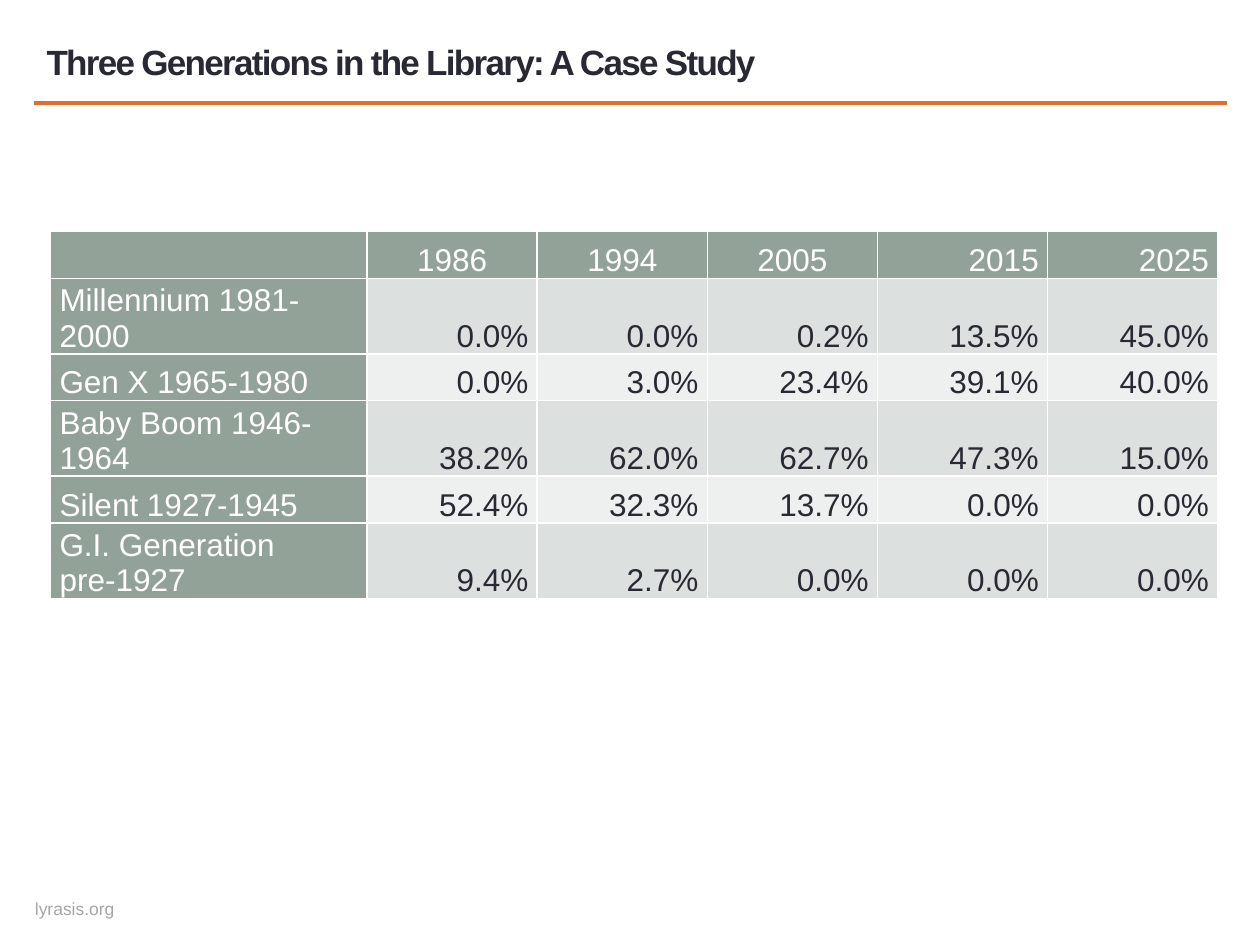
from dataclasses import dataclass

from lxml.etree import SubElement
from pptx import Presentation
from pptx.dml.color import RGBColor as Color
from pptx.enum.shapes import MSO_CONNECTOR as Connector
from pptx.enum.text import MSO_ANCHOR as Anchor, PP_ALIGN as Align
from pptx.oxml.ns import qn
from pptx.util import Cm, Pt


@dataclass(frozen=True)
class Theme:
    font: str = "Arial"
    ink: str = "292934"
    white: str = "FFFFFF"
    accent: str = "E16D2E"
    muted: str = "A6A6A6"
    header: str = "93A299"
    bands: tuple = ("DCE0DE", "EEF0EF")
    title_size: int = 20
    table_size: int = 18
    footer_size: int = 10


class SlideBuilder:
    def __init__(self, slide, theme):
        self.slide = slide
        self.theme = theme

    def add_run(self, paragraph, text, size, color, bold=False):
        run = paragraph.add_run()
        run.text = text
        run.font.name = self.theme.font
        run.font.size = Pt(size)
        run.font.bold = bold
        run.font.color.rgb = Color.from_string(color)
        return run

    def text_box(self, left, top, width, height, text, size, color, bold=False,
                 align=Align.LEFT, inset=(0, 0), wrap=True, spacing=0):
        box = self.slide.shapes.add_textbox(Cm(left), Cm(top), Cm(width), Cm(height))
        frame = box.text_frame
        frame.word_wrap = wrap
        frame.vertical_anchor = Anchor.MIDDLE
        frame.margin_left = frame.margin_right = Cm(inset[0])
        frame.margin_top = frame.margin_bottom = Cm(inset[1])
        paragraph = frame.paragraphs[0]
        paragraph.alignment = align
        run = self.add_run(paragraph, text, size, color, bold)
        if spacing:
            run.font._element.set("spc", str(int(spacing * 100)))

    def rule(self, left, right, y, color, weight):
        line = self.slide.shapes.add_connector(
            Connector.STRAIGHT, Cm(left), Cm(y), Cm(right), Cm(y))
        line.line.color.rgb = Color.from_string(color)
        line.line.width = Pt(weight)
        SubElement(line._element.spPr, qn("a:effectLst"))

    def cell_borders(self, cell, color, weight):
        properties = cell._tc.get_or_add_tcPr()
        for position, side in enumerate(("lnL", "lnR", "lnT", "lnB")):
            border = SubElement(properties, qn(f"a:{side}"), w=str(Pt(weight)))
            fill = SubElement(border, qn("a:solidFill"))
            SubElement(fill, qn("a:srgbClr"), val=color)
            properties.insert(position, border)  # borders come before the fill

    def table_cell(self, cell, text, fill, color, align):
        cell.fill.solid()
        cell.fill.fore_color.rgb = Color.from_string(fill)
        cell.vertical_anchor = Anchor.BOTTOM
        cell.margin_left = cell.margin_right = Cm(0.18)
        cell.margin_top = cell.margin_bottom = 0
        self.cell_borders(cell, self.theme.white, 1)
        paragraph = cell.text_frame.paragraphs[0]
        paragraph.alignment = align
        if text:
            self.add_run(paragraph, text, self.theme.table_size, color)

    def table(self, left, top, rows, widths, heights, header_aligns):
        theme = self.theme
        table = self.slide.shapes.add_table(
            len(rows), len(widths), Cm(left), Cm(top),
            Cm(sum(widths)), Cm(sum(heights))).table
        for column, width in zip(table.columns, widths):
            column.width = Cm(width)
        for row, height in zip(table.rows, heights):
            row.height = Cm(height)
        for r, values in enumerate(rows):
            for c, text in enumerate(values):
                is_header = r == 0 or c == 0
                fill = theme.header if is_header else theme.bands[(r - 1) % 2]
                color = theme.white if is_header else theme.ink
                align = header_aligns[c] if r == 0 else Align.RIGHT if c else Align.LEFT
                self.table_cell(table.cell(r, c), text, fill, color, align)


GENERATIONS = [
    ("", "1986", "1994", "2005", "2015", "2025"),
    ("Millennium 1981-2000", "0.0%", "0.0%", "0.2%", "13.5%", "45.0%"),
    ("Gen X 1965-1980", "0.0%", "3.0%", "23.4%", "39.1%", "40.0%"),
    ("Baby Boom 1946-1964", "38.2%", "62.0%", "62.7%", "47.3%", "15.0%"),
    ("Silent 1927-1945", "52.4%", "32.3%", "13.7%", "0.0%", "0.0%"),
    ("G.I. Generation pre-1927", "9.4%", "2.7%", "0.0%", "0.0%", "0.0%"),
]


def main():
    presentation = Presentation()
    presentation.slide_width, presentation.slide_height = Cm(25.4), Cm(19.05)
    theme = Theme()
    slide = presentation.slides.add_slide(presentation.slide_layouts[6])
    builder = SlideBuilder(slide, theme)

    # Rule and footer
    builder.rule(0.69, 24.74, 2.08, theme.accent, 2.08)
    builder.text_box(0.69, 18.11, 1.63, 0.43, "lyrasis.org", theme.footer_size,
                     theme.muted, align=Align.CENTER, wrap=False)

    # Title
    builder.text_box(0.69, 0.61, 18.59, 1.27,
                     "Three Generations in the Library: A Case Study",
                     theme.title_size, theme.ink, bold=True,
                     inset=(0.25, 0.13), spacing=-1)

    # Share of each generation by year
    builder.table(1.02, 4.67, GENERATIONS,
                  widths=[6.38] + [3.43] * 5,
                  heights=[0.94, 0.99, 0.94, 0.94, 0.94, 1.4],
                  header_aligns=[Align.LEFT] + [Align.CENTER] * 3 + [Align.RIGHT] * 2)

    presentation.save("out.pptx")


if __name__ == "__main__":
    main()
